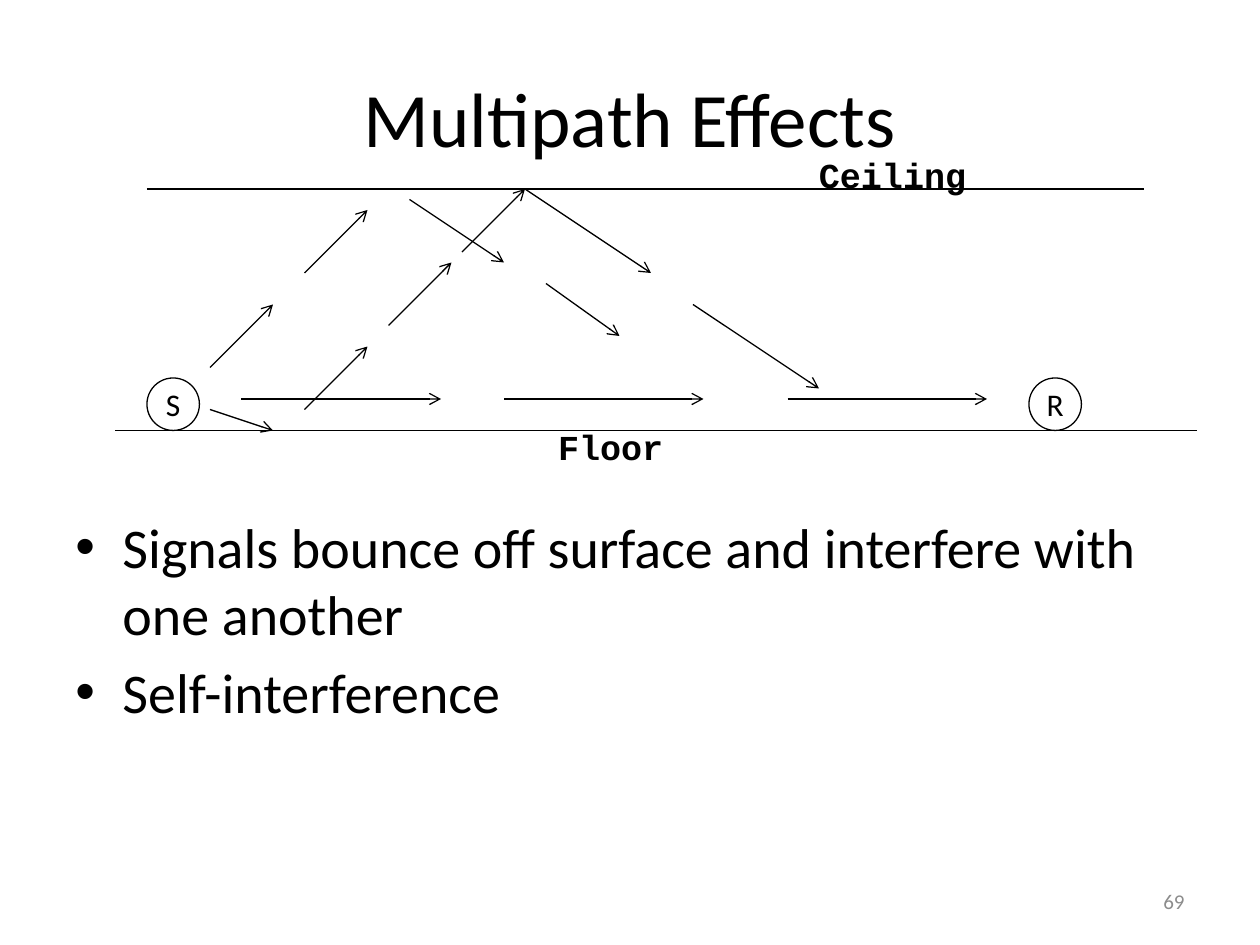
"""Build the slide on multipath effects."""
from lxml.etree import SubElement
from pptx import Presentation
from pptx.dml.color import RGBColor
from pptx.enum.shapes import MSO_CONNECTOR as Link, MSO_SHAPE as Form
from pptx.enum.text import MSO_ANCHOR as Anchor, PP_ALIGN as Align
from pptx.oxml.ns import qn
from pptx.util import Cm, Pt


def ink(code):
    return RGBColor.from_string(code)


def write(frame, lines, size, font="Calibri", tint="000000", bold=False,
          align=Align.LEFT, anchor=Anchor.TOP, wrap=True):
    frame.word_wrap = wrap
    frame.vertical_anchor = anchor
    for i, line in enumerate(lines):
        para = frame.paragraphs[0] if i == 0 else frame.add_paragraph()
        para.alignment = align
        run = para.add_run()
        run.text = line
        run.font.name = font
        run.font.size = Pt(size)
        run.font.bold = bold
        run.font.color.rgb = ink(tint)


deck = Presentation()
deck.slide_width, deck.slide_height = Cm(25.4), Cm(19.05)
slide = deck.slides.add_slide(deck.slide_layouts[6])
shapes = slide.shapes

title = shapes.add_textbox(Cm(1.27), Cm(0.76), Cm(22.86), Cm(3.18))
write(title.text_frame, ["Multipath Effects"], 44,
      align=Align.CENTER, anchor=Anchor.MIDDLE)

body = shapes.add_textbox(Cm(1.27), Cm(10.2), Cm(22.86), Cm(6.63))
points = ["Signals bounce off surface and interfere with one another",
          "Self-interference"]
write(body.text_frame, points, 32)
for para in body.text_frame.paragraphs:
    para.space_before = Pt(6.4)
    props = para._p.get_or_add_pPr()
    props.set("marL", str(Cm(0.95)))
    props.set("indent", str(-Cm(0.95)))
    SubElement(props, qn("a:buFont"), typeface="Arial")
    SubElement(props, qn("a:buChar"), char="•")

unit = Cm(2.54) // 12
for name, left in [("S", 14), ("R", 98)]:
    node = shapes.add_shape(Form.OVAL, left * unit, 36 * unit, 5 * unit, 5 * unit)
    node.shadow.inherit = False
    node.fill.background()
    node.line.color.rgb = ink("000000")
    node.line.width = Pt(0.75)
    write(node.text_frame, [name], 18, align=Align.CENTER,
          anchor=Anchor.MIDDLE, wrap=False)

walls = [(11, 41, 114, 41), (14, 18, 109, 18)]
direct = [(x, 38, x + 19, 38) for x in (23, 48, 75)]
high = [(20, 35, 26, 29), (29, 26, 35, 20), (39, 19, 48, 25), (52, 27, 59, 32)]
low = [(20, 39, 26, 41), (29, 39, 35, 33), (37, 31, 43, 25),
       (44, 24, 50, 18), (50, 18, 62, 26), (66, 29, 78, 37)]
for ends in walls + direct + high + low:
    ray = shapes.add_connector(Link.STRAIGHT, *[n * unit for n in ends])
    ray.line.color.rgb = ink("000000")
    ray.line.width = Pt(0.75)
    if ends not in walls:
        SubElement(ray.line._ln, qn("a:tailEnd"), type="arrow")
    SubElement(ray._element.spPr, qn("a:effectLst"))

for name, left, top, width in [("Ceiling", 16.26, 2.97, 3.5),
                               ("Floor", 11, 8.46, 2.64)]:
    label = shapes.add_textbox(Cm(left), Cm(top), Cm(width), Cm(1.12))
    write(label.text_frame, [name], 20, "Courier New", bold=True, wrap=False)

number = shapes.add_textbox(Cm(18.2), Cm(17.65), Cm(5.93), Cm(1.02))
write(number.text_frame, ["69"], 12, tint="8C8C8C",
      align=Align.RIGHT, anchor=Anchor.MIDDLE)

deck.save("out.pptx")
